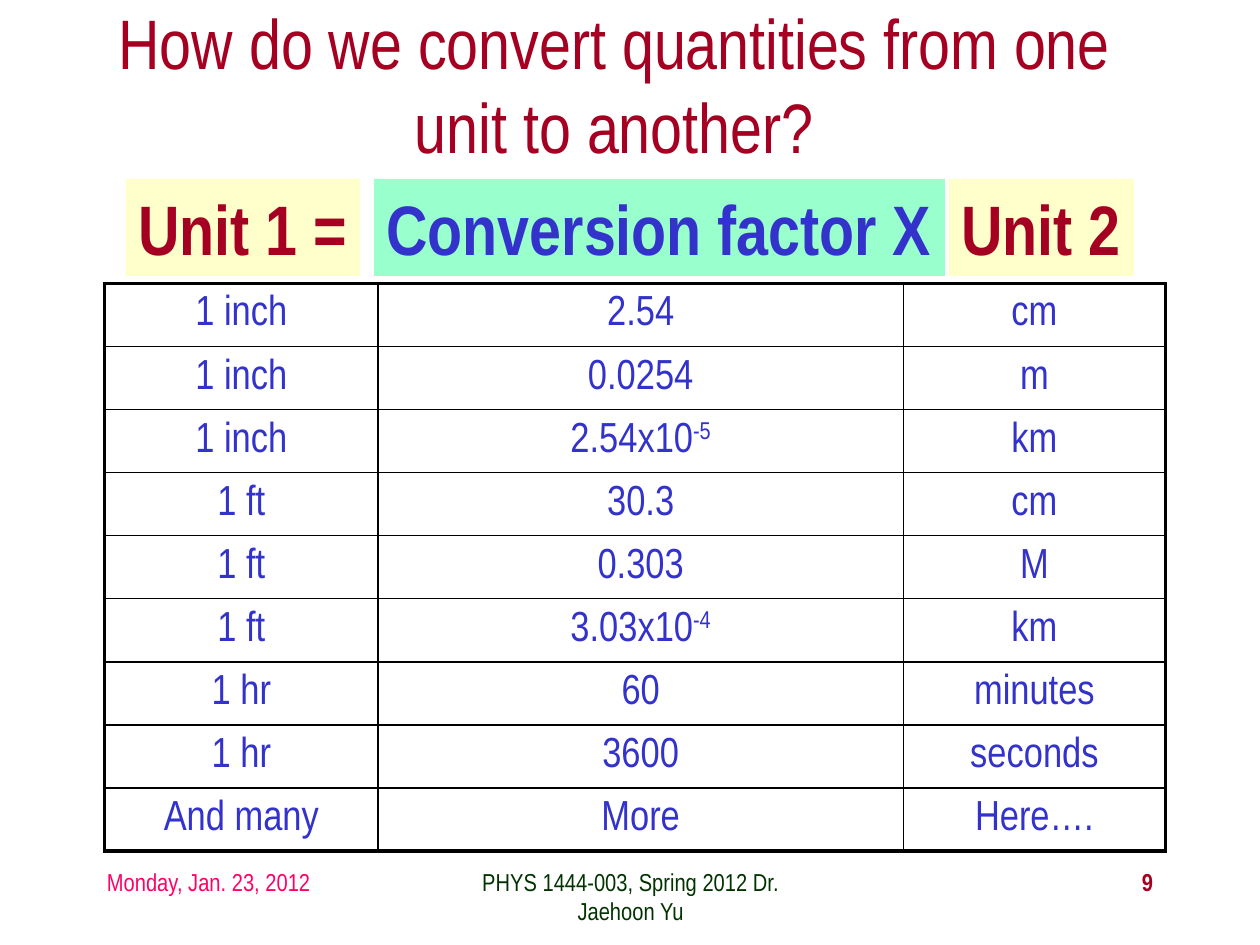
from lxml.etree import SubElement
from pptx import Presentation
from pptx.dml.color import RGBColor
from pptx.enum.shapes import MSO_SHAPE
from pptx.enum.text import MSO_ANCHOR, MSO_AUTO_SIZE, PP_ALIGN
from pptx.oxml.ns import qn
from pptx.util import Inches, Pt

CRIMSON = RGBColor(0xA5, 0x00, 0x21)
BLUE = RGBColor(0x33, 0x33, 0xCC)
PINK = RGBColor(0xFF, 0x00, 0x66)
GREEN = RGBColor(0x00, 0x33, 0x00)
CREAM = RGBColor(0xFF, 0xFF, 0xCC)
MINT = RGBColor(0x99, 0xFF, 0xCC)

CONVERSIONS = [
    ("1 inch", "2.54", "cm"),
    ("1 inch", "0.0254", "m"),
    ("1 inch", "2.54x10^-5", "km"),
    ("1 ft", "30.3", "cm"),
    ("1 ft", "0.303", "M"),
    ("1 ft", "3.03x10^-4", "km"),
    ("1 hr", "60", "minutes"),
    ("1 hr", "3600", "seconds"),
    ("And many", "More", "Here…."),
]


def set_border(cell, side, points):
    line = SubElement(cell._tc.get_or_add_tcPr(), qn(f"a:ln{side}"), w=str(Pt(points)))
    fill = SubElement(line, qn("a:solidFill"))
    SubElement(fill, qn("a:srgbClr"), val="000000")


class SlideBuilder:
    font_name = "Arial Narrow"
    thin, thick = 1, 2.25

    def __init__(self, page):
        self.page = page

    def format_text(self, frame, size, color, align=PP_ALIGN.LEFT, bold=False):
        for para in frame.paragraphs:
            para.alignment = align
            for span in para.runs:
                span.font.name = self.font_name
                span.font.size = Pt(size)
                span.font.bold = bold
                span.font.color.rgb = color

    def title(self, text, left, top, width, height):
        title = self.page.shapes.title
        title.left, title.top = Inches(left), Inches(top)
        title.width, title.height = Inches(width), Inches(height)
        frame = title.text_frame
        frame.text = text
        frame.auto_size = MSO_AUTO_SIZE.NONE
        frame.vertical_anchor = MSO_ANCHOR.MIDDLE
        self.format_text(frame, 40, CRIMSON, PP_ALIGN.CENTER)

    def footer(self, text, left, width, color, align, bold=False):
        box = self.page.shapes.add_textbox(
            Inches(left), Inches(6.83), Inches(width), Inches(0.5))
        box.text_frame.word_wrap = True
        box.text_frame.text = text
        self.format_text(box.text_frame, 14, color, align, bold)

    def heading(self, text, left, width, fill, color):
        box = self.page.shapes.add_shape(
            MSO_SHAPE.RECTANGLE, Inches(left), Inches(1.42), Inches(width), Inches(0.77))
        box.shadow.inherit = False
        box.fill.solid()
        box.fill.fore_color.rgb = fill
        box.line.fill.background()
        frame = box.text_frame
        frame.text = text
        frame.word_wrap = False
        frame.auto_size = MSO_AUTO_SIZE.SHAPE_TO_FIT_TEXT
        frame.vertical_anchor = MSO_ANCHOR.TOP
        self.format_text(frame, 40, color, bold=True)

    def table(self, rows, left, top, widths, row_height):
        last_row, last_column = len(rows) - 1, len(widths) - 1
        table = self.page.shapes.add_table(
            len(rows), len(widths), Inches(left), Inches(top),
            Inches(sum(widths)), Inches(row_height * len(rows))).table
        table.first_row = table.horz_banding = False
        for column, width in zip(table.columns, widths):
            column.width = Inches(width)
        for r, row in enumerate(rows):
            table.rows[r].height = Inches(row_height)
            for c, text in enumerate(row):
                cell = table.cell(r, c)
                self.fill_cell(cell, text)
                outer = {"L": c == 0, "R": c == last_column,
                         "T": r == 0, "B": r == last_row}
                for side, is_outer in outer.items():
                    set_border(cell, side, self.thick if is_outer else self.thin)
                cell.fill.background()

    def fill_cell(self, cell, text):
        """Write the text, raising whatever follows a caret."""
        base, _, exponent = text.partition("^")
        cell.text_frame.text = base
        cell.vertical_anchor = MSO_ANCHOR.MIDDLE
        if exponent:
            span = cell.text_frame.paragraphs[0].add_run()
            span.text = exponent
            span._r.get_or_add_rPr().set("baseline", "30000")
        self.format_text(cell.text_frame, 24, BLUE, PP_ALIGN.CENTER)


def main():
    deck = Presentation()
    deck.slide_width, deck.slide_height = Inches(10), Inches(7.5)
    builder = SlideBuilder(deck.slides.add_slide(deck.slide_layouts[5]))

    builder.title("How do we convert quantities from one unit to another?",
                  0.75, 0, 8.25, 1.33)
    builder.heading("Unit 1 =", 1, 1.86, CREAM, CRIMSON)
    builder.heading("Unit 2", 7.53, 1.47, CREAM, CRIMSON)
    builder.heading("Conversion factor X", 2.97, 4.53, MINT, BLUE)
    builder.table(CONVERSIONS, 0.83, 2.25, (2.17, 4.17, 2.08), 0.5)

    builder.footer("Monday, Jan. 23, 2012", 0.75, 2.08, PINK, PP_ALIGN.LEFT)
    builder.footer("PHYS 1444-003, Spring 2012 Dr. Jaehoon Yu",
                   3.42, 3.17, GREEN, PP_ALIGN.CENTER)
    builder.footer("9", 7.17, 2.08, CRIMSON, PP_ALIGN.RIGHT, bold=True)

    deck.save("out.pptx")


if __name__ == "__main__":
    main()
